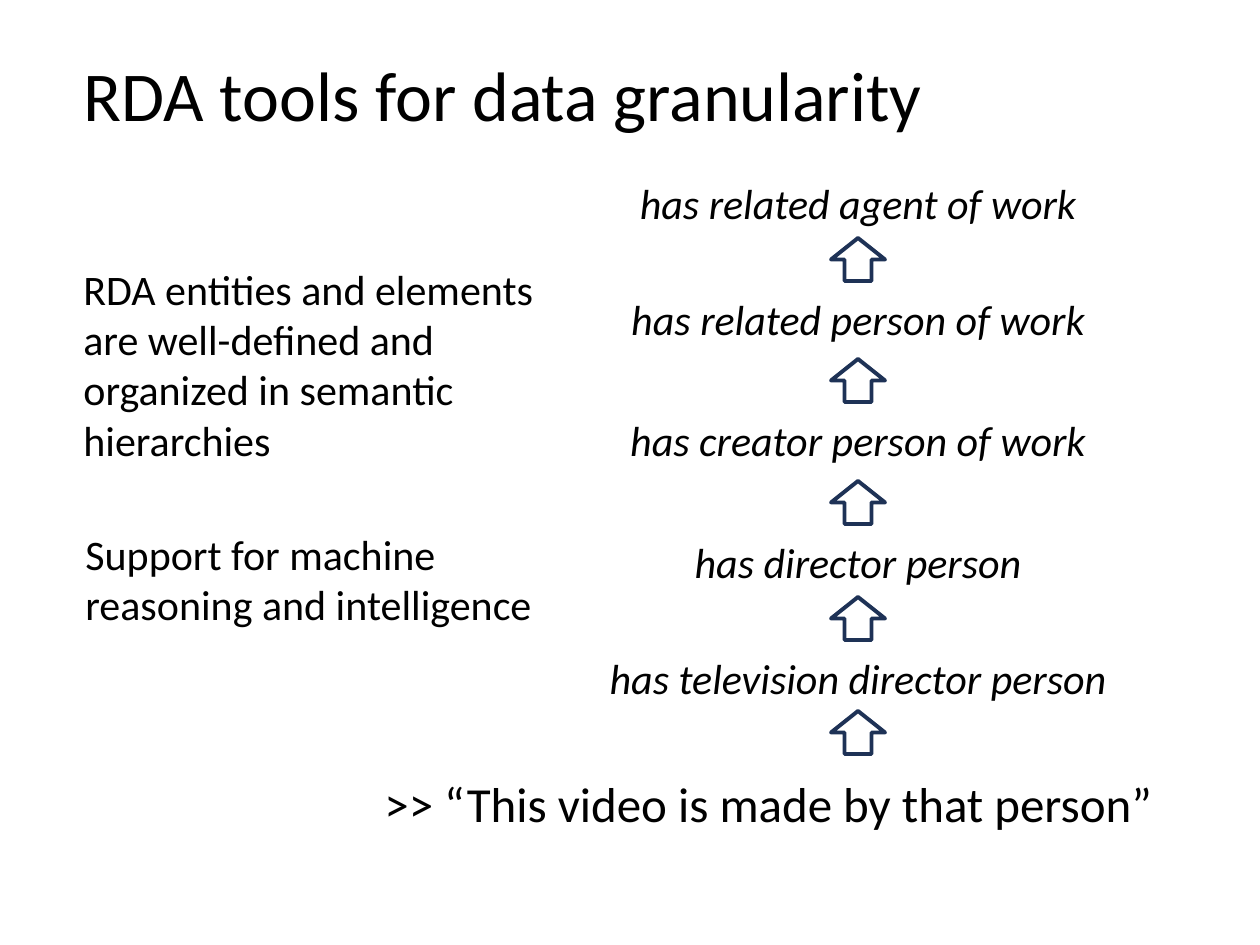
import pptx
import pptx.util
from pptx.dml.color import RGBColor
from pptx.enum.shapes import MSO_SHAPE
from pptx.enum.text import MSO_ANCHOR, MSO_AUTO_SIZE, PP_ALIGN

BLACK = RGBColor(0x00, 0x00, 0x00)
NAVY = RGBColor(0x1E, 0x32, 0x56)
FONT = "Calibri"

# Content: lengths in px, 126 to the inch
TITLE = ("RDA tools for data granularity", (71, 45, 872, 97), 40)
NOTES = [  # text, (left, top, width, height), size, wrap
    ("RDA entities and elements are well-defined and organized in semantic hierarchies",
     (71, 257, 510, 217), 24, True),
    ("Support for machine reasoning and intelligence", (73, 522, 510, 115), 24, True),
    (">> “This video is made by that person”", (372, 767, 803, 72), 28, False),
]
HIERARCHY = [  # label, label top, top of the arrow below it
    ("has related agent of work", 171, 238),
    ("has related person of work", 287, 359),
    ("has creator person of work", 408, 481),
    ("has director person", 530, 597),
    ("has television director person", 646, 711),
]
CENTRE = 858
LABEL_WIDTH, LABEL_HEIGHT = 528, 63
ARROW_WIDTH, ARROW_HEIGHT = 54, 43


def px(length):
    return round(length * 914400 / 126)


def write(box, text, size, wrap=True, align=PP_ALIGN.LEFT, italic=False):
    frame = box.text_frame
    frame.text = text
    frame.word_wrap = wrap
    frame.auto_size = MSO_AUTO_SIZE.NONE
    frame.vertical_anchor = MSO_ANCHOR.TOP
    para = frame.paragraphs[0]
    para.alignment = align
    para.font.name = FONT
    para.font.size = pptx.util.Pt(size)
    para.font.italic = italic
    para.font.color.rgb = BLACK


deck = pptx.Presentation()
deck.slide_width, deck.slide_height = px(1260), px(945)
page = deck.slides.add_slide(deck.slide_layouts[5])

# Title
text, place, size = TITLE
title = page.shapes.title
title.left, title.top, title.width, title.height = map(px, place)
write(title, text, size, wrap=False)

# Notes on the left and the closing statement
for text, place, size, wrap in NOTES:
    write(page.shapes.add_textbox(*map(px, place)), text, size, wrap)

# Hierarchy of elements, each with an arrow pointing up to it
for text, label_top, arrow_top in HIERARCHY:
    label = page.shapes.add_textbox(px(CENTRE - LABEL_WIDTH / 2), px(label_top),
                                    px(LABEL_WIDTH), px(LABEL_HEIGHT))
    write(label, text, 24, wrap=False, align=PP_ALIGN.CENTER, italic=True)
    arrow = page.shapes.add_shape(MSO_SHAPE.UP_ARROW, px(CENTRE - ARROW_WIDTH / 2),
                                  px(arrow_top), px(ARROW_WIDTH), px(ARROW_HEIGHT))
    arrow.shadow.inherit = False
    arrow.fill.background()
    arrow.line.color.rgb = NAVY
    arrow.line.width = pptx.util.Pt(2.25)

deck.save("out.pptx")
